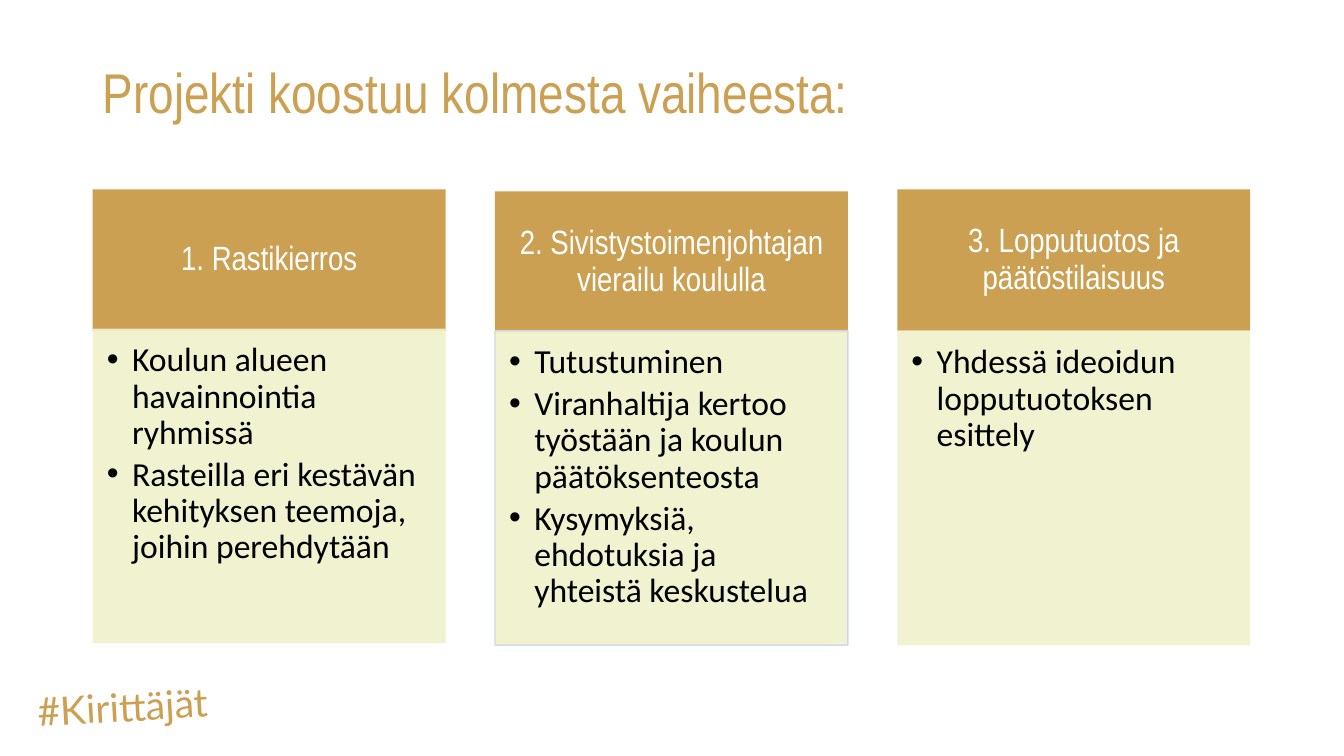
from lxml.etree import SubElement
from pptx import Presentation
from pptx.dml.color import RGBColor
from pptx.enum.shapes import MSO_SHAPE as Shape
from pptx.enum.text import MSO_ANCHOR as Anchor, PP_ALIGN as Align
from pptx.oxml.ns import qn
from pptx.util import Inches, Pt

COLORS = {"gold": "CBA052", "cream": "EFF1CB", "edge": "CFD5EA",
          "white": "FFFFFF", "black": "000000"}

# Heading, bullets, header top, body top, body has an edge
PHASES = [
    ("1. Rastikierros",
     ["Koulun alueen havainnointia ryhmissä",
      "Rasteilla eri kestävän kehityksen teemoja, joihin perehdytään"],
     1.88, 3.26, False),
    ("2. Sivistystoimenjohtajan vierailu koululla",
     ["Tutustuminen",
      "Viranhaltija kertoo työstään ja koulun päätöksenteosta",
      "Kysymyksiä, ehdotuksia ja yhteistä keskustelua"],
     1.9, 3.28, True),
    ("3. Lopputuotos ja päätöstilaisuus",
     ["Yhdessä ideoidun lopputuotoksen esittely"],
     1.88, 3.28, False),
]
LEFT, STEP, WIDTH = 0.92, 3.99, 3.5
HEADER_HEIGHT, BODY_HEIGHT = 1.4, 3.12


def color(name):
    return RGBColor.from_string(COLORS[name])


def set_frame(shape, anchor, insets):
    frame = shape.text_frame
    frame.word_wrap = True
    frame.vertical_anchor = anchor
    (frame.margin_left, frame.margin_top,
     frame.margin_right, frame.margin_bottom) = map(Inches, insets)
    return frame


def add_span(para, text, size, font, tint):
    span = para.add_run()
    span.text = text
    span.font.size = Pt(size)
    span.font.name = font
    span.font.color.rgb = color(tint)


def add_bullet(para):
    props = para._p.get_or_add_pPr()
    props.set("marL", str(Inches(0.25)))
    props.set("indent", str(Inches(-0.25)))
    SubElement(props, qn("a:buFont"), typeface="Arial")
    SubElement(props, qn("a:buChar"), char="•")


def set_alpha(fill_owner, percent):
    for tint in fill_owner.iter(qn("a:srgbClr")):
        SubElement(tint, qn("a:alpha"), val=str(percent * 1000))


def add_panel(page, left, top, width, height, tint):
    panel = page.shapes.add_shape(Shape.RECTANGLE, Inches(left), Inches(top),
                                  Inches(width), Inches(height))
    panel.shadow.inherit = False
    panel.fill.solid()
    panel.fill.fore_color.rgb = color(tint)
    panel.line.fill.background()
    return panel


def add_label(page, left, top, width, height, text, size, font):
    box = page.shapes.add_textbox(Inches(left), Inches(top),
                                  Inches(width), Inches(height))
    frame = set_frame(box, Anchor.TOP, (0.1, 0.05, 0.1, 0.05))
    add_span(frame.paragraphs[0], text, size, font, "gold")
    return box


def add_title(page, left, top, width, height):
    box = add_label(page, left, top, width, height,
                    "Projekti koostuu kolmesta vaiheesta:", 40, "Arial Narrow")
    box.text_frame.vertical_anchor = Anchor.MIDDLE
    box.text_frame.paragraphs[0].line_spacing = 0.9


def add_header(page, left, top, width, height, heading):
    panel = add_panel(page, left, top, width, height, "gold")
    frame = set_frame(panel, Anchor.MIDDLE, (0.19, 0.11, 0.19, 0.11))
    para = frame.paragraphs[0]
    para.alignment = Align.CENTER
    para.line_spacing = 0.9
    add_span(para, heading, 24, "Arial Narrow", "white")


def add_body(page, left, top, width, height, bullets, edged):
    panel = add_panel(page, left, top, width, height, "cream")
    if edged:
        panel.line.color.rgb = color("edge")
        panel.line.width = Pt(1)
    set_alpha(panel._element.spPr, 90)
    frame = set_frame(panel, Anchor.TOP, (0.14, 0.14, 0.19, 0.21))
    for index, bullet in enumerate(bullets):
        para = frame.add_paragraph() if index else frame.paragraphs[0]
        para.alignment = Align.LEFT
        para.line_spacing = 0.9
        para.space_after = Pt(4)
        add_bullet(para)
        add_span(para, bullet, 24, "Calibri", "black")


def main():
    deck = Presentation()
    deck.slide_width, deck.slide_height = Inches(13.33), Inches(7.5)
    page = deck.slides.add_slide(deck.slide_layouts[6])

    # Hashtag and title
    hashtag = add_label(page, 0.27, 6.7, 2.69, 0.57, "#Kirittäjät", 28, "Lato")
    hashtag.rotation = 356.7
    add_title(page, 0.92, 0.4, 11.5, 1.09)

    # Phase columns
    for index, (heading, bullets, header_top, body_top, edged) in enumerate(PHASES):
        left = LEFT + index * STEP
        add_header(page, left, header_top, WIDTH, HEADER_HEIGHT, heading)
        add_body(page, left, body_top, WIDTH, BODY_HEIGHT, bullets, edged)

    deck.save("out.pptx")


if __name__ == "__main__":
    main()
